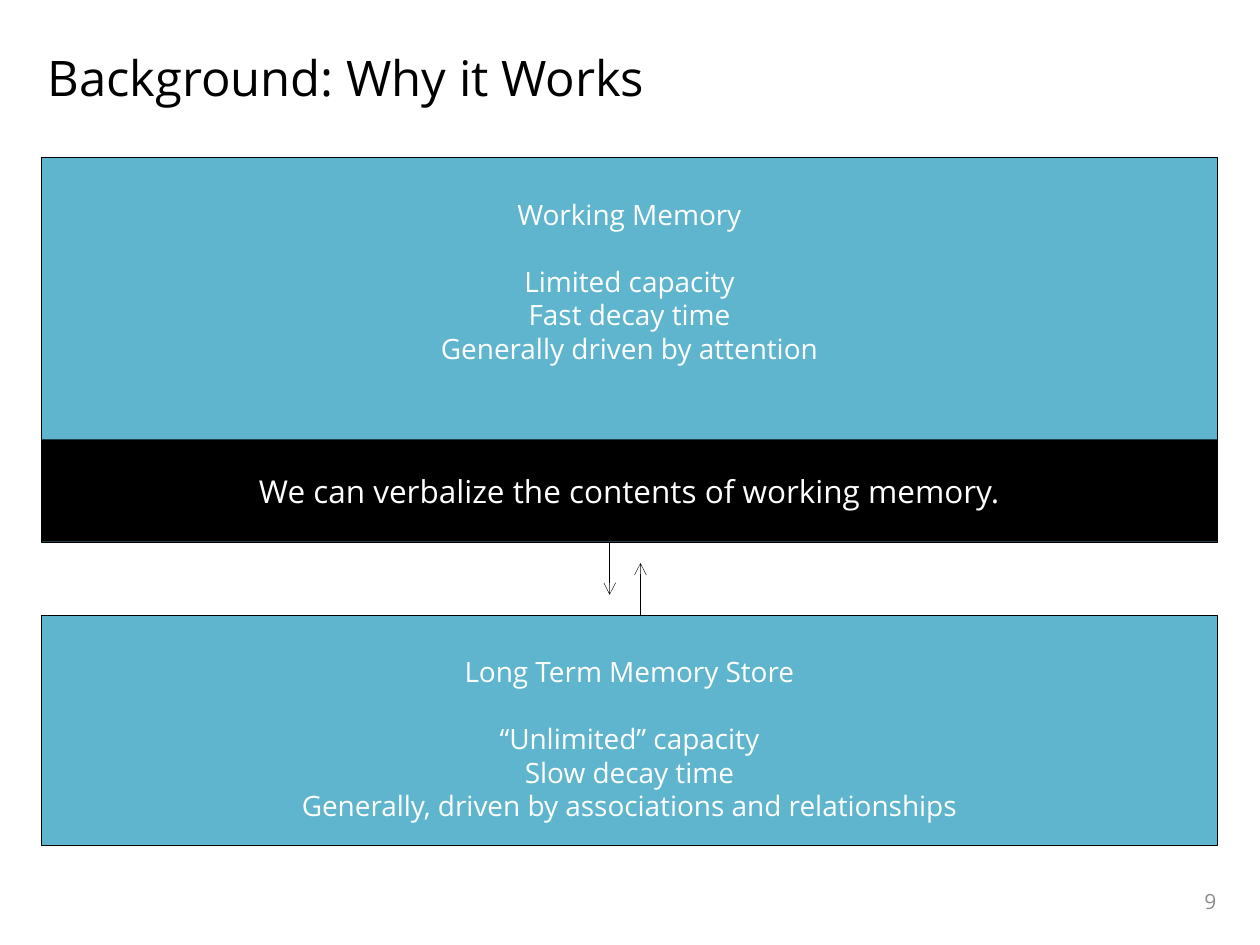
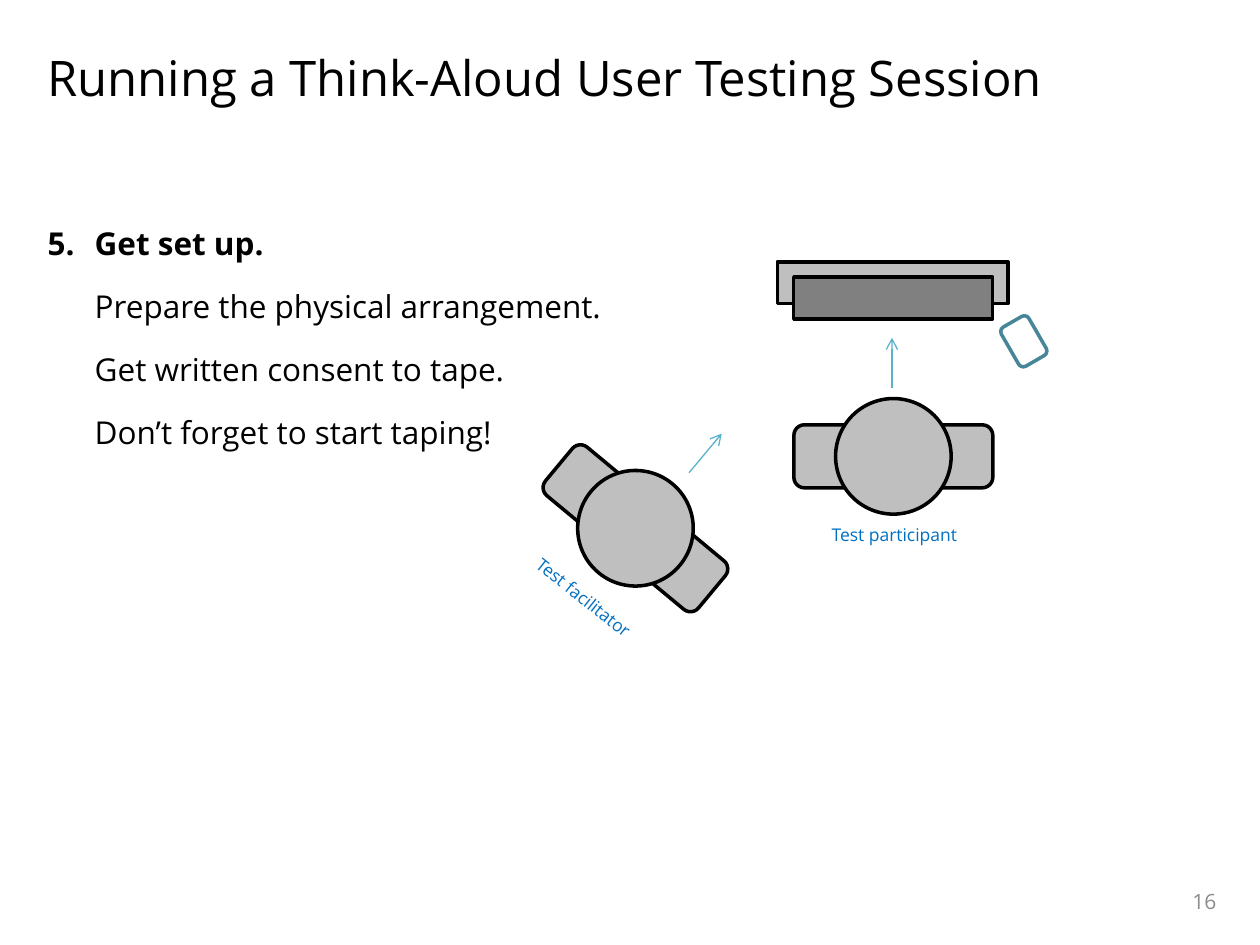
from dataclasses import dataclass

from lxml import etree
from pptx import Presentation
from pptx.dml.color import RGBColor
from pptx.enum.shapes import MSO_CONNECTOR, MSO_SHAPE as Preset
from pptx.enum.text import MSO_ANCHOR as Anchor, PP_ALIGN as Align
from pptx.oxml.ns import qn
from pptx.util import Cm, Pt


@dataclass(frozen=True)
class Theme:
    font: str = "Open Sans"
    black: str = "000000"
    white: str = "FFFFFF"
    memory: str = "5FB5CD"
    gaze: str = "5AB3CB"
    camera: str = "468698"
    light_grey: str = "BFBFBF"
    dark_grey: str = "808080"
    number: str = "8C8C8C"
    label: str = "0070C0"
    title_size: int = 28
    body_size: int = 18
    memory_size: int = 16
    number_size: int = 12
    label_size: int = 10
    thin: float = 0.25
    gaze_width: float = 0.75
    thick: float = 2


THEME = Theme()
MARGIN, CONTENT_WIDTH = 0.71, 24.05
BAND_LEFT, BAND_WIDTH = 0.84, 23.7
STEP_INDENT = 0.95


def set_values(target, values):
    for name, value in values.items():
        setattr(target, name, value)


def write(paragraph, text, size, color, bold=False, **layout):
    """Put one formatted run in a paragraph; layout holds paragraph attributes."""
    set_values(paragraph, layout)
    run = paragraph.add_run()
    run.text = text
    set_values(run.font, {"name": THEME.font, "size": Pt(size), "bold": bold})
    run.font.color.rgb = RGBColor.from_string(color)


def add_text(slide, box, text, size, color, anchor=Anchor.TOP, align=Align.LEFT):
    text_box = slide.shapes.add_textbox(*map(Cm, box))
    set_values(text_box.text_frame, {"word_wrap": True, "vertical_anchor": anchor})
    write(text_box.text_frame.paragraphs[0], text, size, color, alignment=align)
    return text_box


def add_block(slide, preset, box, fill, outline=None, width=THEME.thick, rotation=0):
    block = slide.shapes.add_shape(preset, *map(Cm, box))
    block.shadow.inherit = False
    block.rotation = rotation
    block.fill.solid()
    block.fill.fore_color.rgb = RGBColor.from_string(fill)
    if outline:
        block.line.color.rgb = RGBColor.from_string(outline)
        block.line.width = Pt(width)
    else:
        block.line.fill.background()
    return block


def add_arrow(slide, start, end, color, width):
    arrow = slide.shapes.add_connector(MSO_CONNECTOR.STRAIGHT, *map(Cm, (*start, *end)))
    arrow.line.color.rgb = RGBColor.from_string(color)
    arrow.line.width = Pt(width)
    etree.SubElement(arrow.line._get_or_add_ln(), qn("a:tailEnd"), type="arrow")
    etree.SubElement(arrow._element.spPr, qn("a:effectLst"))


def centered(x, y, width, height):
    return x - width / 2, y - height / 2, width, height


def add_titled_slide(deck, title, number):
    slide = deck.slides.add_slide(deck.slide_layouts[6])
    add_text(slide, (MARGIN, 0.84, CONTENT_WIDTH, 2.74), title,
             THEME.title_size, THEME.black)
    add_text(slide, (18.85, 17.65, 5.92, 1.02), number, THEME.number_size,
             THEME.number, Anchor.MIDDLE, Align.RIGHT)
    return slide


def add_memory(slide, top, height, heading, traits):
    memory = add_block(slide, Preset.RECTANGLE, (BAND_LEFT, top, BAND_WIDTH, height),
                       THEME.memory, THEME.black, THEME.thin)
    frame = memory.text_frame
    set_values(frame, {"word_wrap": True, "vertical_anchor": Anchor.TOP,
                       "margin_top": Cm(0.8)})
    write(frame.paragraphs[0], heading, THEME.memory_size, THEME.white,
          alignment=Align.CENTER)
    for index, trait in enumerate(traits):
        write(frame.add_paragraph(), trait, THEME.memory_size, THEME.white,
              alignment=Align.CENTER, space_before=Pt(0 if index else 19))


def add_step(slide, number, heading, details):
    """Add a numbered heading with its details indented below it."""
    frame = add_text(slide, (MARGIN, 4.01, CONTENT_WIDTH, 13.13), heading,
                     THEME.body_size, THEME.black).text_frame
    first = frame.paragraphs[0]
    first.runs[0].font.bold = True
    first.line_spacing = 1.5
    properties = first._p.get_or_add_pPr()
    properties.set("marL", str(Cm(STEP_INDENT)))
    properties.set("indent", str(-Cm(STEP_INDENT)))
    etree.SubElement(properties, qn("a:buFont"), typeface=THEME.font)
    etree.SubElement(properties, qn("a:buAutoNum"), type="arabicPeriod",
                     startAt=str(number))
    for detail in details:
        paragraph = frame.add_paragraph()
        paragraph._p.get_or_add_pPr().set("marL", str(Cm(STEP_INDENT)))
        write(paragraph, detail, THEME.body_size, THEME.black,
              line_spacing=1.5, space_before=Pt(0.2 * THEME.body_size))


def add_person(slide, x, y, rotation=0):
    """Draw shoulders and head, seen from above, around one centre."""
    for preset, width, height in ((Preset.ROUNDED_RECTANGLE, 4.01, 1.27),
                                  (Preset.OVAL, 2.33, 2.33)):
        add_block(slide, preset, centered(x, y, width, height),
                  THEME.light_grey, THEME.black, rotation=rotation)


def add_person_label(slide, x, y, role, rotation=0):
    label = add_text(slide, centered(x, y, 4.37, 0.69), role,
                     THEME.label_size, THEME.label, align=Align.CENTER)
    label.rotation = rotation


def build_background(deck):
    slide = add_titled_slide(deck, "Background: Why it Works", "9")
    add_memory(slide, 12.4, 4.65, "Long Term Memory Store",
               ("“Unlimited” capacity", "Slow decay time",
                "Generally, driven by associations and relationships"))
    add_memory(slide, 3.18, 7.75, "Working Memory",
               ("Limited capacity", "Fast decay time",
                "Generally driven by attention"))
    for x, start, end in ((12.29, 10.92, 11.99), (12.91, 12.4, 11.35)):
        add_arrow(slide, (x, start), (x, end), THEME.black, THEME.thin)
    verbalize = add_block(slide, Preset.RECTANGLE,
                          (BAND_LEFT, 8.86, BAND_WIDTH, 2.06), THEME.black)
    set_values(verbalize.text_frame,
               {"word_wrap": True, "vertical_anchor": Anchor.MIDDLE})
    write(verbalize.text_frame.paragraphs[0],
          "We can verbalize the contents of working memory.",
          THEME.body_size, THEME.white, alignment=Align.CENTER)


def build_session(deck):
    slide = add_titled_slide(deck, "Running a Think-Aloud User Testing Session", "16")
    add_step(slide, 5, "Get set up.",
             ("Prepare the physical arrangement.", "Get written consent to tape.",
              "Don’t forget to start taping!"))
    desk, screen = (15.67, 5.28, 4.65, 0.84), (16, 5.59, 4.01, 0.84)
    for box, fill in ((desk, THEME.light_grey), (screen, THEME.dark_grey)):
        add_block(slide, Preset.RECTANGLE, box, fill, THEME.black)
    add_block(slide, Preset.ROUNDED_RECTANGLE, centered(20.64, 6.88, 0.64, 0.91),
              THEME.white, THEME.camera, rotation=330)
    add_person(slide, 18.01, 9.2)
    add_person(slide, 12.81, 10.65, 39.7)
    for start, end in (((17.98, 7.82), (17.98, 6.81)),
                       ((13.89, 9.53), (14.55, 8.74))):
        add_arrow(slide, start, end, THEME.gaze, THEME.gaze_width)
    add_person_label(slide, 18.03, 10.78, "Test participant")
    add_person_label(slide, 11.76, 12.05, "Test facilitator", 38.3)


def main():
    deck = Presentation()
    set_values(deck, {"slide_width": Cm(25.4), "slide_height": Cm(19.05)})
    build_background(deck)
    build_session(deck)
    deck.save("out.pptx")


if __name__ == "__main__":
    main()
